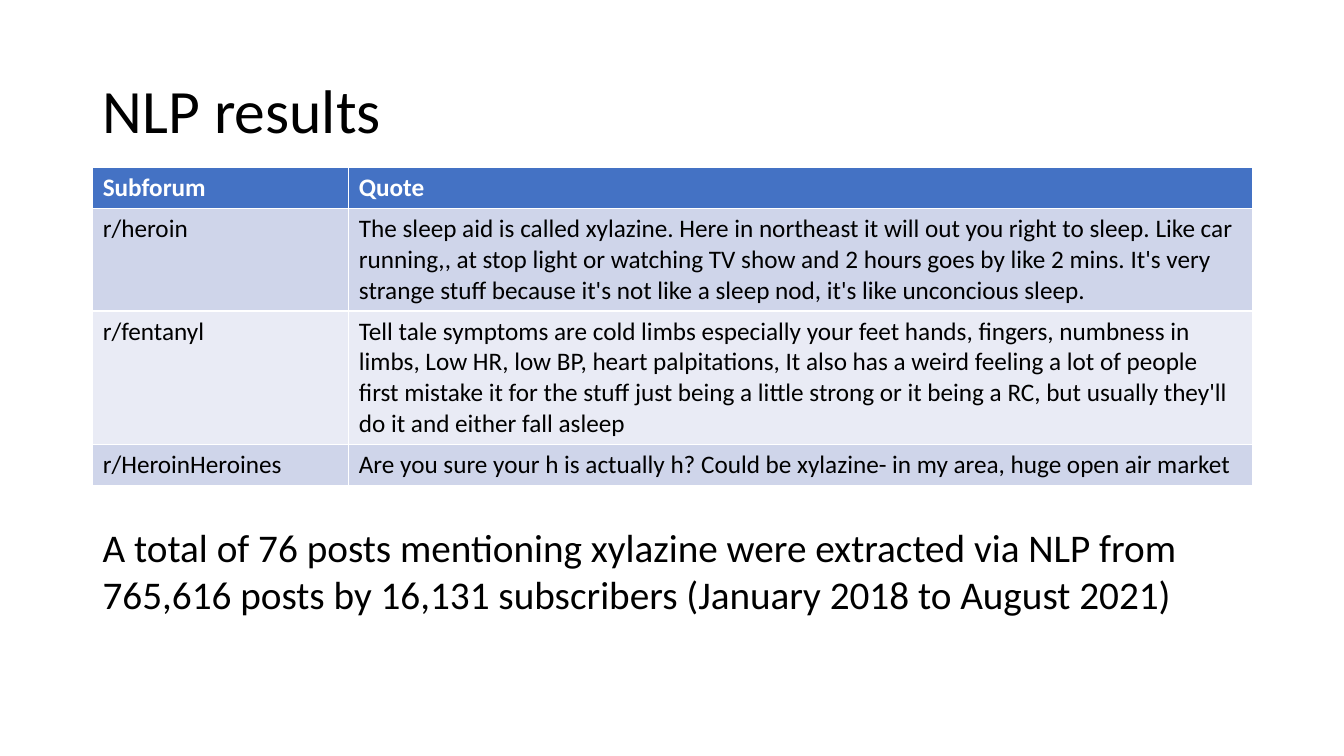
from pptx import Presentation
from pptx.dml.color import RGBColor
from pptx.enum.text import MSO_ANCHOR, PP_ALIGN
from pptx.util import Inches, Pt

FONT = "Calibri"
BLACK = RGBColor(0x00, 0x00, 0x00)
WHITE = RGBColor(0xFF, 0xFF, 0xFF)
HEADER_BLUE = RGBColor(0x44, 0x72, 0xC4)
BANDS = [RGBColor(0xCF, 0xD5, 0xEA), RGBColor(0xE9, 0xEB, 0xF5)]

LEFT = Inches(0.92)
WIDTH = Inches(11.5)
COLUMN_WIDTHS = [2.54, 8.96]
ROW_HEIGHTS = [0.41, 1.01, 1.31, 0.41]
QUOTES = [
    ("Subforum", "Quote"),
    ("r/heroin",
     "The sleep aid is called xylazine. Here in northeast it will out you "
     "right to sleep. Like car running,, at stop light or watching TV show "
     "and 2 hours goes by like 2 mins. It's very strange stuff because it's "
     "not like a sleep nod, it's like unconcious sleep."),
    ("r/fentanyl",
     "Tell tale symptoms are cold limbs especially your feet hands, fingers, "
     "numbness in limbs, Low HR, low BP, heart palpitations, It also has a "
     "weird feeling a lot of people first mistake it for the stuff just being "
     "a little strong or it being a RC, but usually they'll do it and either "
     "fall asleep"),
    ("r/HeroinHeroines",
     "Are you sure your h is actually h? Could be xylazine- in my area, huge "
     "open air market"),
]
SUMMARY = ("A total of 76 posts mentioning xylazine were extracted via NLP from "
           "765,616 posts by 16,131 subscribers (January 2018 to August 2021)")


def add_run(p, text, size, color=BLACK, bold=False):
    r = p.add_run()
    r.text = text
    r.font.name = FONT
    r.font.size = Pt(size)
    r.font.bold = bold
    r.font.color.rgb = color


def add_title(s, text):
    title = s.shapes.title
    title.left, title.top = LEFT, Inches(0.4)
    title.width, title.height = WIDTH, Inches(1.45)
    tf = title.text_frame
    tf.vertical_anchor = MSO_ANCHOR.MIDDLE
    p = tf.paragraphs[0]
    p.alignment = PP_ALIGN.LEFT
    p.line_spacing = 0.9
    add_run(p, text, 44)


def add_quote_table(s):
    # The default table style supplies the white cell borders
    table = s.shapes.add_table(len(QUOTES), len(COLUMN_WIDTHS), LEFT,
                               Inches(1.66), WIDTH,
                               Inches(sum(ROW_HEIGHTS))).table
    for column, width in zip(table.columns, COLUMN_WIDTHS):
        column.width = Inches(width)
    for i, (row, height) in enumerate(zip(table.rows, ROW_HEIGHTS)):
        row.height = Inches(height)
        header = i == 0
        for cell, text in zip(row.cells, QUOTES[i]):
            cell.fill.solid()
            cell.fill.fore_color.rgb = HEADER_BLUE if header else BANDS[(i - 1) % 2]
            add_run(cell.text_frame.paragraphs[0], text, 18,
                    WHITE if header else BLACK, header)


def add_summary(s, text):
    box = s.shapes.add_textbox(LEFT, Inches(5.14), Inches(10.9), Inches(1.04))
    tf = box.text_frame
    tf.word_wrap = True
    add_run(tf.paragraphs[0], text, 28)


def main():
    prs = Presentation()
    prs.slide_width, prs.slide_height = Inches(13.33), Inches(7.5)
    s = prs.slides.add_slide(prs.slide_layouts[5])

    # Heading, quotes by forum, closing statement
    add_title(s, "NLP results")
    add_quote_table(s)
    add_summary(s, SUMMARY)

    prs.save("out.pptx")


if __name__ == "__main__":
    main()
